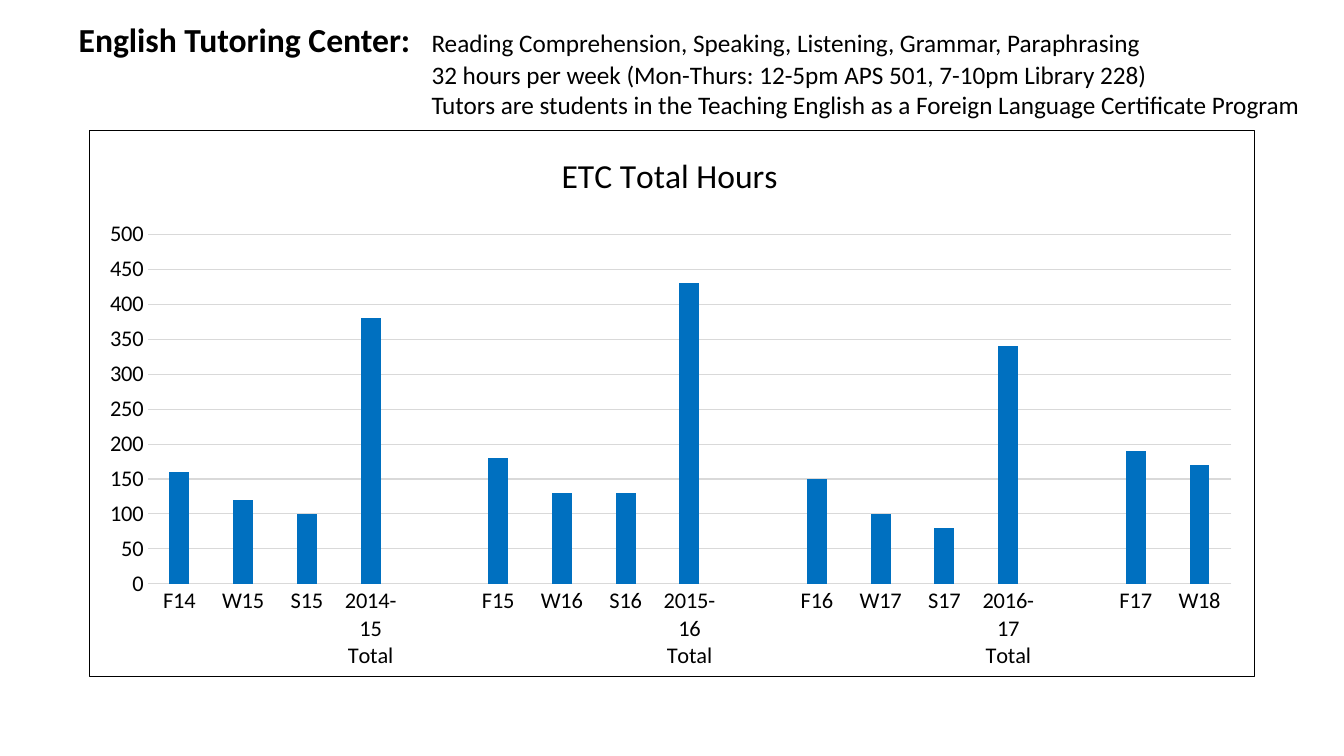
from dataclasses import dataclass

from lxml.etree import SubElement
from pptx import Presentation
from pptx.chart.data import CategoryChartData
from pptx.dml.color import RGBColor
from pptx.enum.chart import XL_CHART_TYPE as ChartType, XL_TICK_MARK as TickMark
from pptx.enum.text import MSO_ANCHOR as Anchor, MSO_AUTO_SIZE as AutoSize, PP_ALIGN as Align
from pptx.oxml import parse_xml
from pptx.oxml.ns import nsdecls, qn
from pptx.util import Inches, Pt


@dataclass(frozen=True)
class Theme:
    font: str = "Calibri"
    text: RGBColor = RGBColor(0, 0, 0)
    bar: RGBColor = RGBColor(0x00, 0x70, 0xC0)
    grid: RGBColor = RGBColor(0xD9, 0xD9, 0xD9)
    border: str = "000000"
    heading_size: int = 24
    body_size: int = 18
    axis_size: int = 16
    line_width: float = 0.75


HEADING = "English Tutoring Center:"
DETAILS = [
    "Reading Comprehension, Speaking, Listening, Grammar, Paraphrasing",
    "32 hours per week (Mon-Thurs: 12-5pm APS 501, 7-10pm Library 228)",
    "Tutors are students in the Teaching English as a Foreign Language Certificate Program",
]
TERM_HOURS = [
    ("F14", 160), ("W15", 120), ("S15", 100), ("2014-15 Total", 380), ("", None),
    ("F15", 180), ("W16", 130), ("S16", 130), ("2015-16 Total", 430), ("", None),
    ("F16", 150), ("W17", 100), ("S17", 80), ("2016-17 Total", 340), ("", None),
    ("F17", 190), ("W18", 170),
]


def set_attributes(target, values):
    for name, value in values.items():
        setattr(target, name, value)


class SlideBuilder:
    def __init__(self, presentation, theme):
        self.theme = theme
        self.slide = presentation.slides.add_slide(presentation.slide_layouts[5])

    def style_font(self, font, size, bold=False):
        set_attributes(font, {"name": self.theme.font, "size": Pt(size), "bold": bold})
        font.color.rgb = self.theme.text

    def style_line(self, line):
        line.color.rgb = self.theme.grid
        line.width = Pt(self.theme.line_width)

    def add_run(self, paragraph, text, size, bold=False):
        run = paragraph.add_run()
        run.text = text
        self.style_font(run.font, size, bold)

    def add_title(self, heading, details, box, tab):
        title = self.slide.shapes.title
        set_attributes(title, dict(zip(("left", "top", "width", "height"), map(Inches, box))))
        frame = title.text_frame
        set_attributes(frame, {"word_wrap": True, "vertical_anchor": Anchor.TOP,
                               "auto_size": AutoSize.SHAPE_TO_FIT_TEXT})
        for index, detail in enumerate(details):
            paragraph = frame.add_paragraph() if index else frame.paragraphs[0]
            paragraph.alignment = Align.LEFT
            tabs = SubElement(paragraph._p.get_or_add_pPr(), qn("a:tabLst"))
            SubElement(tabs, qn("a:tab"), pos=str(Inches(tab)), algn="l")
            if index == 0:
                self.add_run(paragraph, heading, self.theme.heading_size, True)
            self.add_run(paragraph, "\t" + detail, self.theme.body_size)

    def add_column_chart(self, title, points, box):
        data = CategoryChartData(number_format="0")
        data.categories = [term for term, hours in points]
        data.add_series("Series 1", [hours for term, hours in points])
        chart = self.slide.shapes.add_chart(
            ChartType.COLUMN_CLUSTERED, *map(Inches, box), data).chart
        self.style_font(chart.font, self.theme.axis_size)
        set_attributes(chart, {"has_legend": False, "has_title": True})
        self.add_run(chart.chart_title.text_frame.paragraphs[0], title, self.theme.heading_size)
        chart.chart_title.include_in_layout = False
        self.style_plot(chart.plots[0])
        self.style_axes(chart.category_axis, chart.value_axis)
        self.place_chart_parts(chart)
        self.add_chart_border(chart)

    def style_plot(self, plot):
        set_attributes(plot, {"gap_width": 219, "overlap": -27, "vary_by_categories": False})
        fill = plot.series[0].format.fill
        fill.solid()
        fill.fore_color.rgb = self.theme.bar

    def style_axes(self, category_axis, value_axis):
        for axis in (category_axis, value_axis):
            set_attributes(axis, {"major_tick_mark": TickMark.NONE,
                                  "minor_tick_mark": TickMark.NONE})
            self.style_font(axis.tick_labels.font, self.theme.axis_size)
        self.style_line(category_axis.format.line)
        set_attributes(value_axis, {"minimum_scale": 0, "maximum_scale": 500,
                                    "major_unit": 50, "has_major_gridlines": True})
        set_attributes(value_axis.tick_labels, {"number_format": "0",
                                                "number_format_is_linked": False})
        value_axis.format.line.fill.background()
        self.style_line(value_axis.major_gridlines.format.line)

    def place_chart_parts(self, chart):
        space = chart._chartSpace
        parts = [
            ("c:title", {"xMode": "edge", "yMode": "edge", "x": 0.4, "y": 0.03}),
            ("c:plotArea", {"layoutTarget": "inner", "xMode": "edge", "yMode": "edge",
                            "x": 0.05, "y": 0.19, "w": 0.93, "h": 0.64}),
        ]
        for tag, values in parts:
            part = space.chart.find(qn(tag))
            layout = part.find(qn("c:layout"))
            if layout is None:
                layout = parse_xml(f"<c:layout {nsdecls('c')}/>")
                text = part.find(qn("c:tx"))
                if text is None:
                    part.insert(0, layout)
                else:
                    text.addnext(layout)
            manual = SubElement(layout, qn("c:manualLayout"))
            for name, value in values.items():
                SubElement(manual, qn("c:" + name), val=str(value))

    def add_chart_border(self, chart):
        chart._chartSpace.chart.addnext(parse_xml(
            f"<c:spPr {nsdecls('c', 'a')}><a:noFill/>"
            f'<a:ln w="{Pt(self.theme.line_width)}"><a:solidFill>'
            f'<a:srgbClr val="{self.theme.border}"/></a:solidFill></a:ln></c:spPr>'))


def main():
    presentation = Presentation()
    set_attributes(presentation, {"slide_width": Inches(13.33), "slide_height": Inches(7.5)})
    builder = SlideBuilder(presentation, Theme())
    builder.add_title(HEADING, DETAILS, (0.68, 0.14, 12.65, 1.11), 3.5)
    builder.add_column_chart("ETC Total Hours", TERM_HOURS, (0.88, 1.29, 11.57, 5.43))
    presentation.save("out.pptx")


if __name__ == "__main__":
    main()
